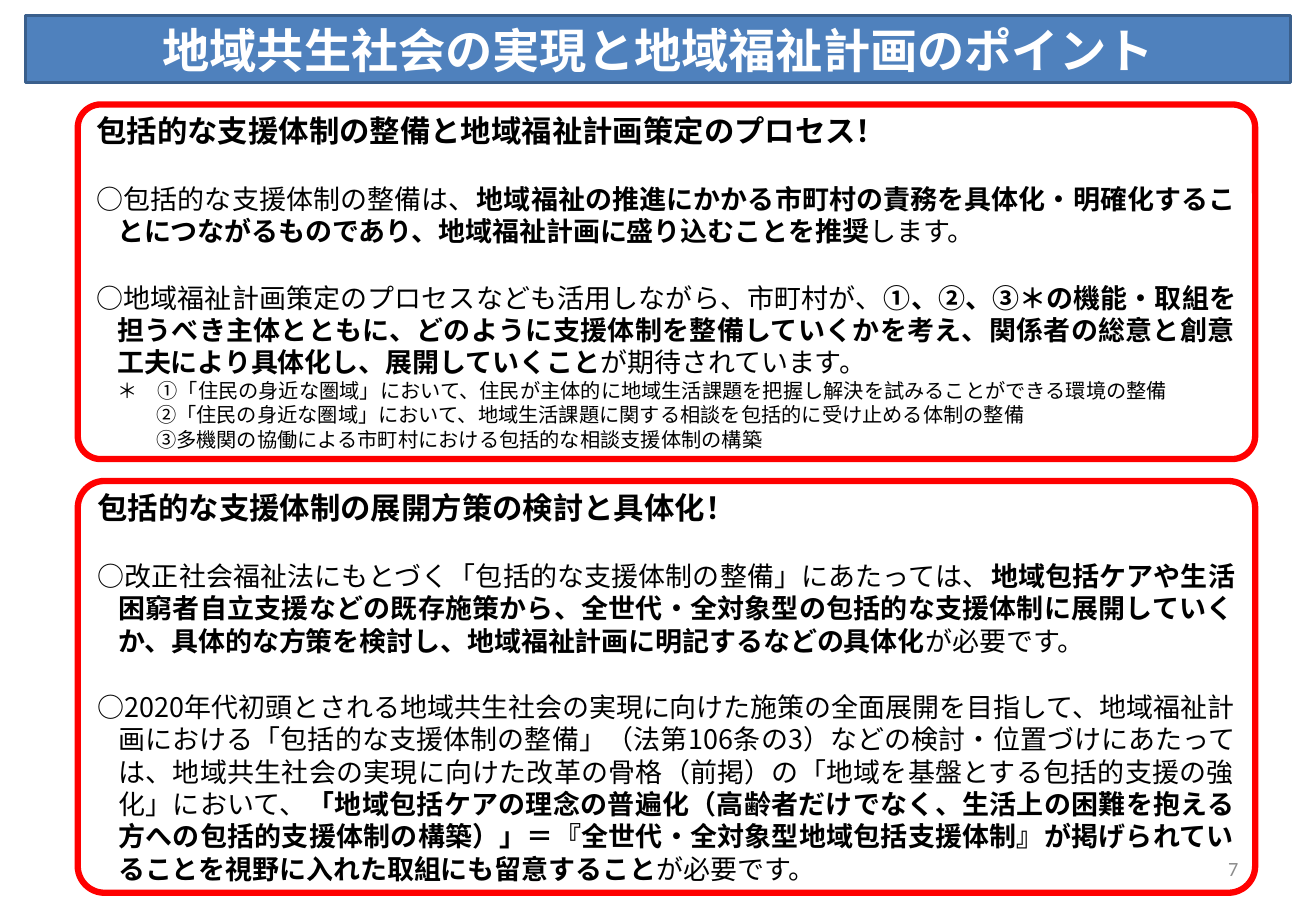
"""Build the slide on community welfare planning."""
import pptx
import pptx.util
import pptx.dml.color
import pptx.enum.shapes
import pptx.enum.text
import pptx.oxml.ns
from lxml import etree

Pt = pptx.util.Pt
Inches = pptx.util.Inches
RGBColor = pptx.dml.color.RGBColor
Align = pptx.enum.text.PP_ALIGN
Anchor = pptx.enum.text.MSO_ANCHOR

WIDTH, HEIGHT = Inches(10.83), Inches(7.5)
BLUE = RGBColor(0x4F, 0x81, 0xBD)
NAVY = RGBColor(0x3A, 0x5F, 0x8C)
RED = RGBColor(0xFF, 0, 0)
WHITE = RGBColor(0xFF, 0xFF, 0xFF)
BLACK = RGBColor(0, 0, 0)
GRAY = RGBColor(0x8C, 0x8C, 0x8C)
LATIN, KANJI = "Calibri", "Noto Sans CJK JP"
HANG = 0.17
GAP = 20
LEAD = 1.2

PROCESS = [
    ("head", ["包括的な支援体制の整備と地域福祉計画策定のプロセス！"]),
    ("point", [
        "○包括的な支援体制の整備は、",
        "地域福祉の推進にかかる市町村の責務を具体化・明確化することにつながるものであり、地域福祉計画に盛り込むことを推奨",
        "します。"]),
    ("point", [
        "○地域福祉計画策定のプロセスなども活用しながら、市町村が、",
        "①、②、③＊の機能・取組を担うべき主体とともに、どのように支援体制を整備していくかを考え、関係者の総意と創意工夫により具体化し、展開していくこと",
        "が期待されています。"]),
    ("star", ["＊　①「住民の身近な圏域」において、住民が主体的に地域生活課題を把握し解決を試みることができる環境の整備"]),
    ("note", ["②「住民の身近な圏域」において、地域生活課題に関する相談を包括的に受け止める体制の整備"]),
    ("note", ["③多機関の協働による市町村における包括的な相談支援体制の構築"]),
]
MEASURES = [
    ("head", ["包括的な支援体制の展開方策の検討と具体化！"]),
    ("point", [
        "○改正社会福祉法にもとづく「包括的な支援体制の整備」にあたっては、",
        "地域包括ケアや生活困窮者自立支援などの既存施策から、全世代・全対象型の包括的な支援体制に展開していくか、具体的な方策を検討し、地域福祉計画に明記するなどの具体化",
        "が必要です。"]),
    ("point", [
        "○2020年代初頭とされる地域共生社会の実現に向けた施策の全面展開を目指して、地域福祉計画における「包括的な支援体制の整備」（法第106条の3）などの検討・位置づけにあたっては、地域共生社会の実現に向けた改革の骨格（前掲）の「地域を基盤とする包括的支援の強化」において、",
        "「地域包括ケアの理念の普遍化（高齢者だけでなく、生活上の困難を抱える方への包括的支援体制の構築）」＝『全世代・全対象型地域包括支援体制』が掲げられていることを視野に入れた取組にも留意すること",
        "が必要です。"]),
]
# Each style: size, left margin, first-line indent, space before
STYLES = {
    "head": (18, HANG, -HANG, 0),
    "point": (16, HANG, -HANG, GAP),
    "star": (12, HANG, 0, 0),
    "note": (12, 0.49, 0, 0),
}


def area(left, top, width, height):
    """Turn percentages of the slide into lengths."""
    return (int(WIDTH * left / 100), int(HEIGHT * top / 100),
            int(WIDTH * width / 100), int(HEIGHT * height / 100))


def style(para, size, color, face, align):
    """Set the font and alignment of a paragraph."""
    font = para.font
    font.size, font.name = Pt(size), face
    font.color.rgb = color
    para.alignment = align


def paint(shape, fill, line, width):
    """Set the fill and outline of a shape."""
    shape.fill.solid()
    shape.fill.fore_color.rgb = fill
    shape.line.color.rgb = line
    shape.line.width = Pt(width)


def add_title(slide, text):
    """Format the title placeholder as a banner."""
    title = slide.shapes.title
    title.left, title.top, title.width, title.height = area(1.94, 1.73, 96.12, 7.33)
    paint(title, BLUE, NAVY, 2)
    frame = title.text_frame
    frame.text = text
    frame.auto_size = pptx.enum.text.MSO_AUTO_SIZE.NONE
    frame.vertical_anchor = Anchor.MIDDLE
    para = frame.paragraphs[0]
    style(para, 28, WHITE, LATIN, Align.CENTER)
    para.font.bold = True


def add_para(para, kind, parts):
    """Write a paragraph whose every second part is bold."""
    size, left, first, gap = STYLES[kind]
    style(para, size, BLACK, KANJI, Align.JUSTIFY)
    para.line_spacing = Pt(round(size * LEAD, 1))
    para.space_before = Pt(gap)
    props = para._p.get_or_add_pPr()
    props.set("marL", str(Inches(left)))
    props.set("indent", str(Inches(first)))
    for spot, text in enumerate(parts):
        run = para.add_run()
        run.text = text
        run.font.bold = kind == "head" or spot % 2 == 1
        east = etree.SubElement(run._r.get_or_add_rPr(), pptx.oxml.ns.qn("a:ea"))
        east.set("typeface", KANJI)


def add_panel(slide, top, height, items):
    """Add a red rounded panel of paragraphs."""
    panel = slide.shapes.add_shape(
        pptx.enum.shapes.MSO_SHAPE.ROUNDED_RECTANGLE, *area(5.91, top, 89.47, height))
    panel.shadow.inherit = False
    panel.adjustments[0] = 0.065
    paint(panel, WHITE, RED, 3.75)
    frame = panel.text_frame
    frame.word_wrap = True
    frame.vertical_anchor = Anchor.MIDDLE
    for spot, (kind, parts) in enumerate(items):
        para = frame.add_paragraph() if spot else frame.paragraphs[0]
        add_para(para, kind, parts)


def add_number(slide, text):
    """Add the page number."""
    frame = slide.shapes.add_textbox(*area(71.65, 92.67, 23.36, 5.33)).text_frame
    frame.word_wrap = True
    frame.vertical_anchor = Anchor.MIDDLE
    frame.text = text
    style(frame.paragraphs[0], 12, GRAY, LATIN, Align.RIGHT)


def main():
    """Build and save the slide."""
    deck = pptx.Presentation()
    deck.slide_width, deck.slide_height = WIDTH, HEIGHT
    slide = deck.slides.add_slide(deck.slide_layouts.get_by_name("Title Only"))
    add_title(slide, "地域共生社会の実現と地域福祉計画のポイント")
    add_panel(slide, 11.47, 38.93, PROCESS)
    add_panel(slide, 52.8, 45.2, MEASURES)
    add_number(slide, "7")
    deck.save("out.pptx")


if __name__ == "__main__":
    main()
